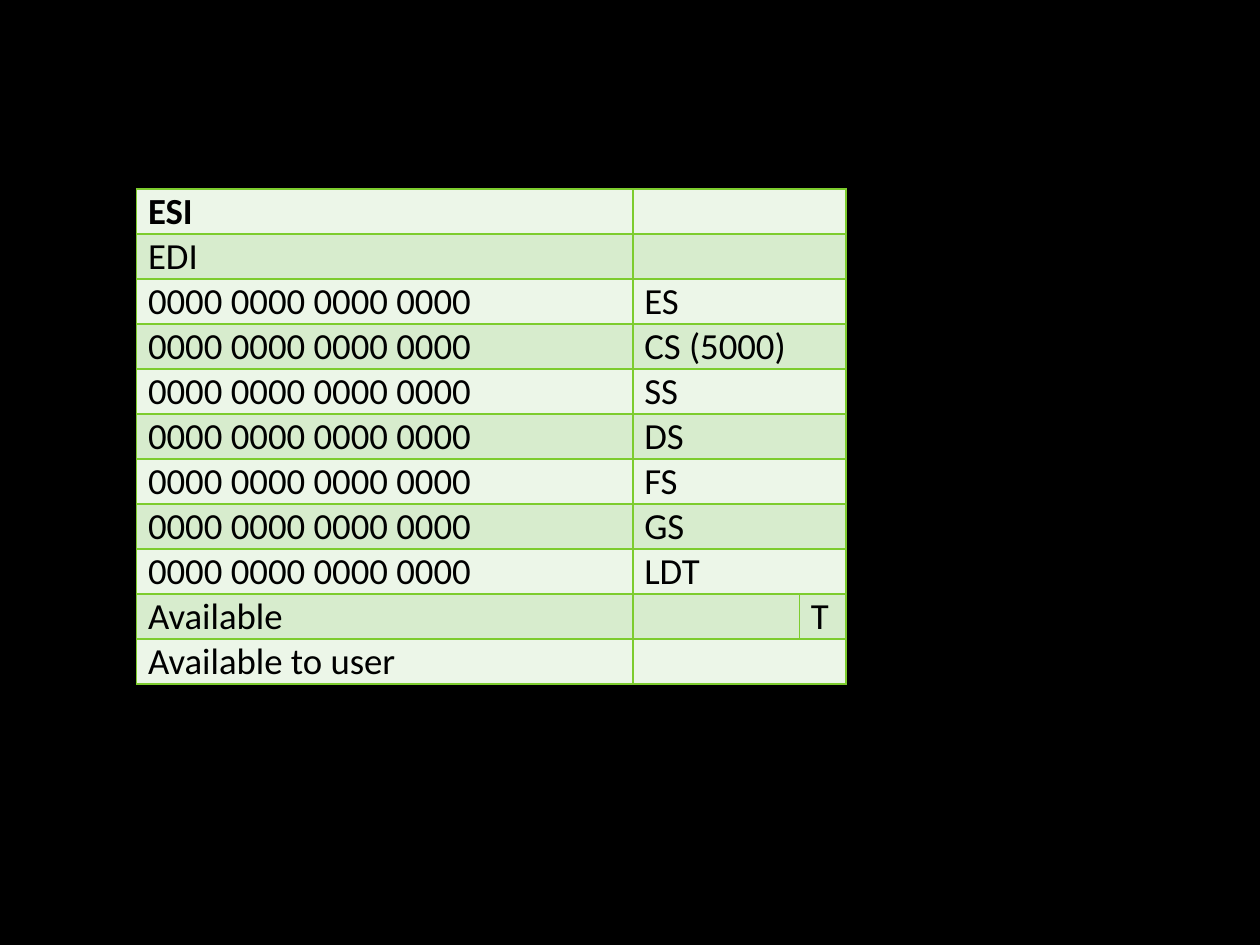
"""Build a slide with a table of task state segment fields."""
from pptx import Presentation
from pptx.dml.color import RGBColor
from pptx.oxml import parse_xml
from pptx.oxml.ns import nsdecls
from pptx.util import Pt


def paint(fill, color):
    fill.solid()
    fill.fore_color.rgb = RGBColor.from_string(color)


def edge(cell, color):
    for side in ("lnL", "lnR", "lnT", "lnB"):
        cell._tc.get_or_add_tcPr().append(parse_xml(
            f'<a:{side} {nsdecls("a")} w="{Pt(1)}"><a:solidFill>'
            f'<a:srgbClr val="{color}"/></a:solidFill></a:{side}>'))


zeros = "0000 0000 0000 0000"
names = ["ES", "CS (5000)", "SS", "DS", "FS", "GS", "LDT"]
rows = [("ESI", "", ""), ("EDI", "", "")]
rows += [(zeros, name, "") for name in names]
rows += [("Available", "", "T"), ("Available to user", "", "")]
widths = [283.6, 95.2, 26.6]
bands = ["ECF6E8", "D7ECCD"]
pads = {"margin_left": Pt(6.6), "margin_right": 0,
        "margin_top": 0, "margin_bottom": 0}

deck = Presentation()
deck.slide_width, deck.slide_height = Pt(720), Pt(540)
slide = deck.slides.add_slide(deck.slide_layouts[6])
paint(slide.background.fill, "000000")

high = 25.2
frame = slide.shapes.add_table(len(rows), len(widths), Pt(78), Pt(108),
                               Pt(sum(widths)), Pt(high * len(rows)))
table = frame.table
table.first_row = table.horz_banding = False
for col, width in zip(table.columns, widths):
    col.width = Pt(width)

for i, row in enumerate(rows):
    table.rows[i].height = Pt(high)
    for j, text in enumerate(row):
        cell = table.cell(i, j)
        edge(cell, "7DCC2E")
        paint(cell.fill, bands[i % 2])
        for key, value in pads.items():
            setattr(cell, key, value)
        cell.text = text
        font = cell.text_frame.paragraphs[0].font
        looks = {"name": "Calibri", "size": Pt(21), "bold": i == 0}
        for key, value in looks.items():
            setattr(font, key, value)
        paint(font.fill, "000000")
    if not row[2]:
        table.cell(i, 1).merge(table.cell(i, 2))

deck.save("out.pptx")
